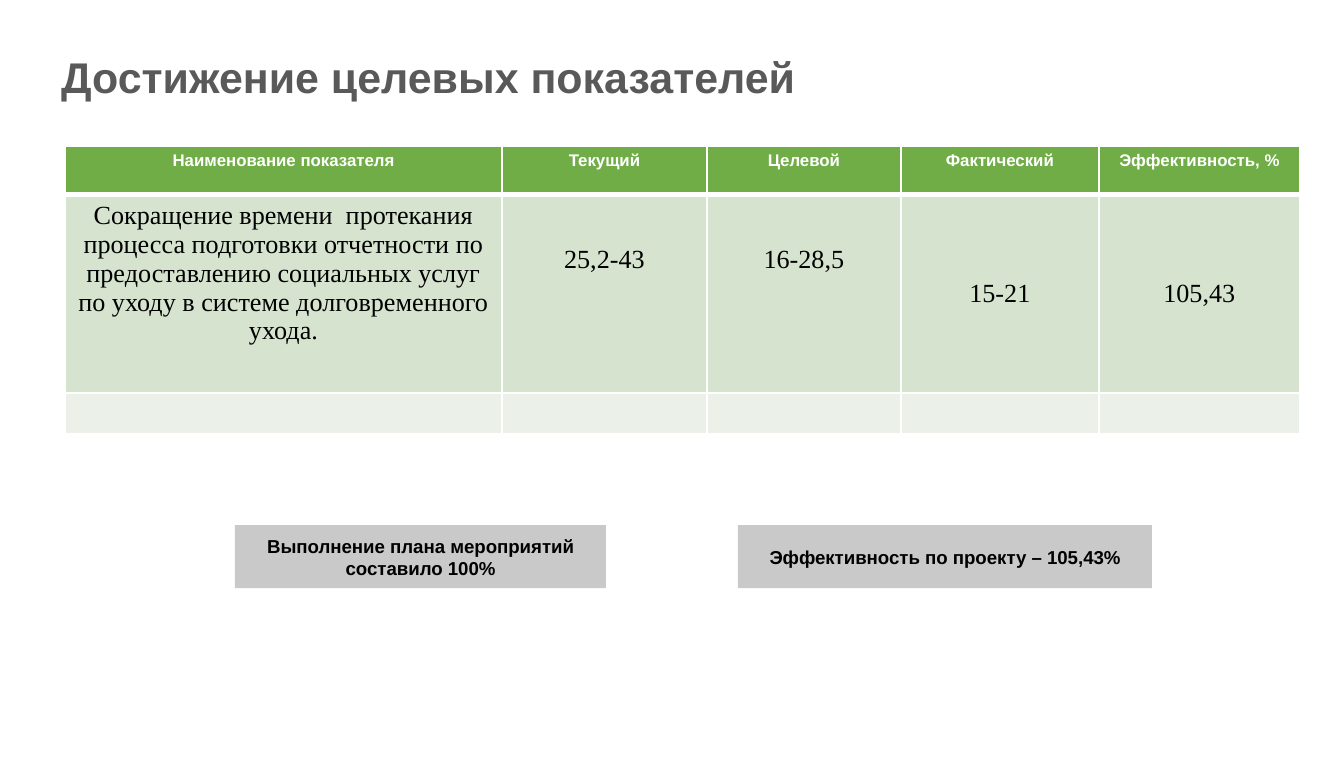
from dataclasses import dataclass

from lxml import etree
from pptx import Presentation
from pptx.dml.color import RGBColor
from pptx.enum.shapes import MSO_SHAPE
from pptx.enum.text import MSO_ANCHOR, PP_ALIGN
from pptx.oxml.ns import qn
from pptx.util import Emu, Inches, Pt

RECT = MSO_SHAPE.RECTANGLE
TOP, MID, LOW = MSO_ANCHOR.TOP, MSO_ANCHOR.MIDDLE, MSO_ANCHOR.BOTTOM
LEFT, CENTER = PP_ALIGN.LEFT, PP_ALIGN.CENTER
SCALE = 914400 / 134.4


@dataclass(frozen=True)
class Theme:
    sans: str = "Arial"
    serif: str = "Times New Roman"
    title: str = "595959"
    head: str = "70AD47"
    body: str = "D5E3CF"
    foot: str = "EBF1E9"
    note: str = "C9C9C9"
    white: str = "FFFFFF"
    black: str = "000000"
    title_size: int = 23
    head_size: int = 9
    body_size: int = 14
    note_size: int = 10


LOOK = Theme()
HEADS = ["Наименование показателя", "Текущий", "Целевой", "Фактический", "Эффективность, %"]
VALUES = [
    "Сокращение времени  протекания процесса подготовки отчетности по "
    "предоставлению социальных услуг по уходу в системе долговременного ухода.",
    "25,2-43", "16-28,5", "15-21", "105,43",
]
COLS = [437, 205, 194, 198, 201]
ROWS = [48, 187, 41]
ANCHORS = [TOP, TOP, TOP, MID, MID]
PADS = [(7, 35), (0, 0), (0, 0), (7, 7), (7, 7)]
LEADS = [None, Pt(43), Pt(43), None, None]


def px(n):
    return Emu(round(n * SCALE))


def place(box):
    return [px(n) for n in box]


def paint(item, color):
    item.fill.solid()
    item.fill.fore_color.rgb = RGBColor.from_string(color)


def write(frame, text, face, size, color, bold, align=CENTER):
    par = frame.paragraphs[0]
    par.text = text
    par.alignment = align
    font = par.font
    font.name, font.size, font.bold = face, Pt(size), bold
    font.color.rgb = RGBColor.from_string(color)
    return par


def border(cell, low):
    props = cell._tc.get_or_add_tcPr()
    sides = [("a:lnL", 1), ("a:lnR", 1), ("a:lnT", 1), ("a:lnB", low)]
    for spot, (tag, width) in enumerate(sides):
        line = etree.Element(qn(tag), w=str(Pt(width)))
        fill = etree.SubElement(line, qn("a:solidFill"))
        etree.SubElement(fill, qn("a:srgbClr"), val=LOOK.white)
        props.insert(spot, line)


def pad(cell, top, low, side=9):
    cell.margin_top, cell.margin_bottom = px(top), px(low)
    cell.margin_left = cell.margin_right = px(side)


def add_title(slide, box):
    frame = slide.shapes.add_textbox(*place(box)).text_frame
    frame.word_wrap = True
    frame.vertical_anchor = LOW
    frame.margin_left = frame.margin_right = px(10)
    frame.margin_top = frame.margin_bottom = px(5)
    par = write(frame, "Достижение целевых показателей", LOOK.sans,
                LOOK.title_size, LOOK.title, True, LEFT)
    par.line_spacing = 0.9


def add_grid(slide, left, top):
    box = (left, top, sum(COLS), sum(ROWS))
    table = slide.shapes.add_table(len(ROWS), len(COLS), *place(box)).table
    for row, high in zip(table.rows, ROWS):
        row.height = px(high)
    for col, wide in enumerate(COLS):
        table.columns[col].width = px(wide)
        head, body, foot = [table.cell(row, col) for row in range(len(ROWS))]
        for cell, color, low in ((head, LOOK.head, 3), (body, LOOK.body, 1), (foot, LOOK.foot, 1)):
            paint(cell, color)
            border(cell, low)
        pad(head, 5, 5)
        write(head.text_frame, HEADS[col], LOOK.sans, LOOK.head_size, LOOK.white, True)
        pad(body, *PADS[col])
        body.vertical_anchor = ANCHORS[col]
        par = write(body.text_frame, VALUES[col], LOOK.serif, LOOK.body_size, LOOK.black, False)
        par.line_spacing = LEADS[col]
        pad(foot, 0, 0)


def add_note(slide, box, text):
    shape = slide.shapes.add_shape(RECT, *place(box))
    shape.shadow.inherit = False
    paint(shape, LOOK.note)
    shape.line.fill.background()
    frame = shape.text_frame
    frame.word_wrap = True
    frame.vertical_anchor = MID
    write(frame, text, LOOK.sans, LOOK.note_size, LOOK.black, True)


def main():
    deck = Presentation()
    deck.slide_width, deck.slide_height = Inches(10), Inches(5.63)
    slide = deck.slides.add_slide(deck.slide_layouts[6])
    add_title(slide, (51, 60, 965, 48))
    add_grid(slide, 65, 146)
    add_note(slide, (738, 525, 414, 63), "Эффективность по проекту – 105,43%")
    add_note(slide, (235, 525, 371, 63), "Выполнение плана мероприятий составило 100%")
    deck.save("out.pptx")


if __name__ == "__main__":
    main()
